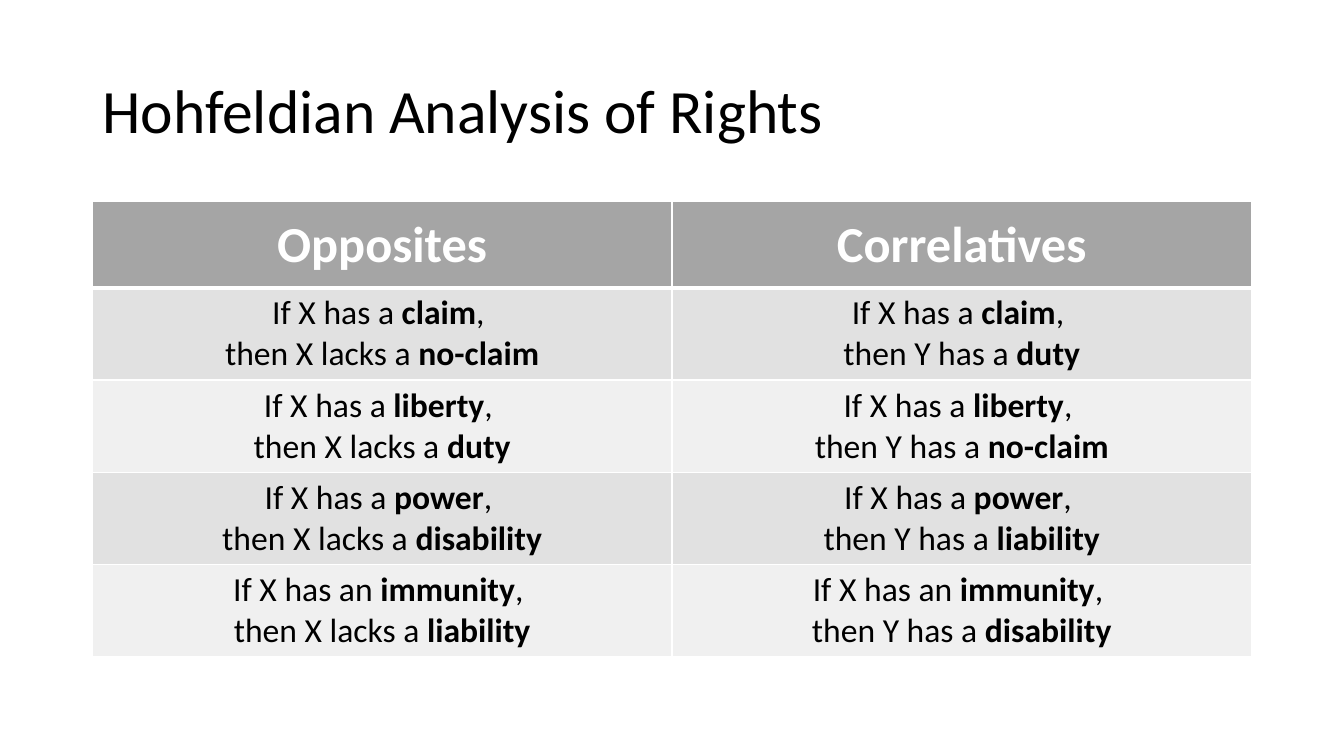
from lxml import etree
from pptx import Presentation
from pptx.dml.color import RGBColor
from pptx.enum import text
from pptx.oxml import ns
from pptx.util import Pt

LEFT, WIDTH = 66, 828
HEADER_HEIGHT, ROW_HEIGHT = 61.7, 65.8
HEADINGS = ["Opposites", "Correlatives"]
RIGHTS = [
    ("a", "claim", "no-claim", "duty"),
    ("a", "liberty", "duty", "no-claim"),
    ("a", "power", "disability", "liability"),
    ("an", "immunity", "liability", "disability"),
]
TITLE = {"size": Pt(44), "name": "Calibri", "bold": False}
HEADING = {"size": Pt(36), "name": "Calibri", "bold": True}
BODY = {"size": Pt(24), "name": "Calibri", "bold": False}
STRONG = {**BODY, "bold": True}


def rgb(value):
    return RGBColor.from_string(value)


def add_run(p, words, style, color="000000"):
    r = p.add_run()
    r.text = words
    for name, value in style.items():
        setattr(r.font, name, value)
    r.font.color.rgb = rgb(color)


def add_title(slide, words):
    sp = slide.shapes.add_textbox(Pt(LEFT), Pt(28.8), Pt(WIDTH), Pt(104.4))
    tf = sp.text_frame
    tf.word_wrap = True
    tf.vertical_anchor = text.MSO_ANCHOR.MIDDLE
    p = tf.paragraphs[0]
    p.line_spacing = 0.9
    add_run(p, words, TITLE)


def set_borders(cell, widths):
    tcPr = cell._tc.get_or_add_tcPr()
    for side, width in widths.items():
        ln = etree.SubElement(tcPr, ns.qn(f"a:ln{side}"), w=str(Pt(width)))
        solid = etree.SubElement(ln, ns.qn("a:solidFill"))
        etree.SubElement(solid, ns.qn("a:srgbClr"), val="FFFFFF")


def format_cell(cell, color, top=1, bottom=1):
    set_borders(cell, {"L": 1, "R": 1, "T": top, "B": bottom})
    cell.fill.solid()
    cell.fill.fore_color.rgb = rgb(color)


def fill_heading(cell, words):
    format_cell(cell, "A5A5A5", bottom=3)
    cell.vertical_anchor = text.MSO_ANCHOR.MIDDLE
    p = cell.text_frame.paragraphs[0]
    p.alignment = text.PP_ALIGN.CENTER
    add_run(p, words, HEADING, "FFFFFF")


def fill_relation(cell, article, right, consequence, result):
    tf = cell.text_frame
    lines = [
        [(f"If X has {article} ", BODY), (right, STRONG), (", ", BODY)],
        [(f"then {consequence} a ", BODY), (result, STRONG)],
    ]
    for p, line in zip([tf.paragraphs[0], tf.add_paragraph()], lines):
        p.alignment = text.PP_ALIGN.CENTER
        for words, style in line:
            add_run(p, words, style)


def add_rights_table(slide):
    height = HEADER_HEIGHT + len(RIGHTS) * ROW_HEIGHT
    table = slide.shapes.add_table(
        len(RIGHTS) + 1, len(HEADINGS), Pt(LEFT), Pt(144), Pt(WIDTH), Pt(height)
    ).table
    table.rows[0].height = Pt(HEADER_HEIGHT)
    for col, heading in enumerate(HEADINGS):
        fill_heading(table.cell(0, col), heading)
    for row, (article, right, opposite, correlative) in enumerate(RIGHTS, 1):
        table.rows[row].height = Pt(ROW_HEIGHT)
        relations = [("X lacks", opposite), ("Y has", correlative)]
        for col, (consequence, result) in enumerate(relations):
            cell = table.cell(row, col)
            format_cell(cell, "E1E1E1" if row % 2 else "F0F0F0", top=3 if row == 1 else 1)
            fill_relation(cell, article, right, consequence, result)


def main():
    prs = Presentation()
    prs.slide_width, prs.slide_height = Pt(960), Pt(540)
    slide = prs.slides.add_slide(prs.slide_layouts[6])
    add_title(slide, "Hohfeldian Analysis of Rights")
    add_rights_table(slide)
    prs.save("out.pptx")


if __name__ == "__main__":
    main()
